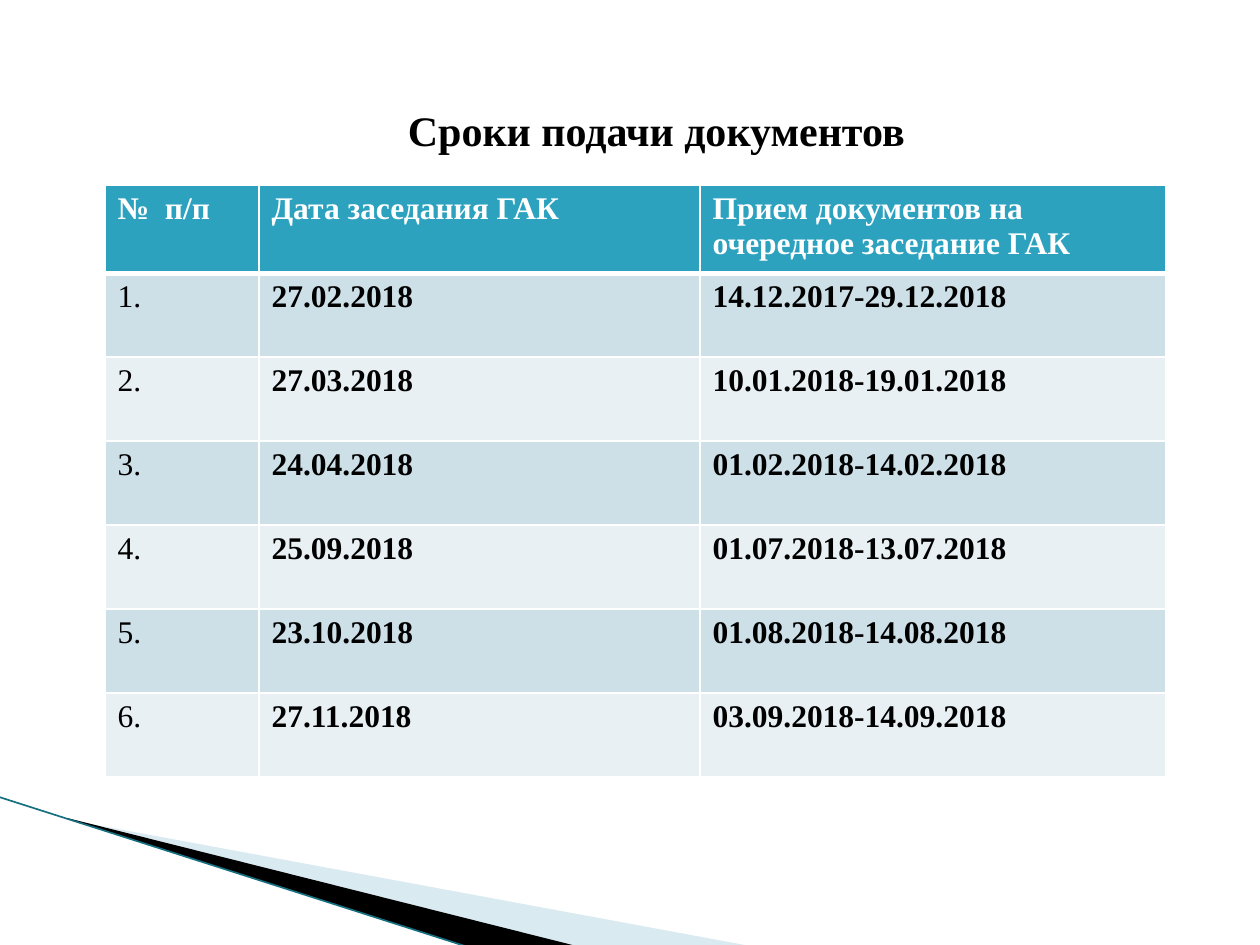
import dataclasses

import lxml.etree
import pptx
import pptx.dml.color
import pptx.enum.shapes
import pptx.enum.text
import pptx.oxml.ns
import pptx.util

PX = 914400 / 126  # EMU per px


@dataclasses.dataclass
class Theme:
    font: str = "Times New Roman"
    title_size: int = 24
    table_size: int = 18
    text: str = "000000"
    white: str = "FFFFFF"
    header: str = "2DA2BF"
    bands: tuple = ("CDE0E8", "E8F0F4")
    pale_wedge: str = "A0CBDC"
    dark_wedge: str = "000000"
    edge: str = "17707F"


theme = Theme()
rgb = pptx.dml.color.RGBColor.from_string
qn = pptx.oxml.ns.qn


def px(n):
    return pptx.util.Emu(round(n * PX))


def style(p, size, color, bold):
    p.font.name = theme.font
    p.font.size = pptx.util.Pt(size)
    p.font.bold = bold
    p.font.color.rgb = rgb(color)


prs = pptx.Presentation()
prs.slide_width, prs.slide_height = px(1260), px(945)
s = prs.slides.add_slide(prs.slide_layouts[6])

# Corner wedges: points, colour, opacity in percent
wedges = [
    ([(69, 820), (750, 946), (575, 946), (69, 819)], theme.pale_wedge, 40),
    ([(67, 818), (576, 946), (469, 947), (68, 819)], theme.dark_wedge, 100),
]
for points, color, opacity in wedges:
    builder = s.shapes.build_freeform(*points[0], scale=PX)
    builder.add_line_segments(points[1:], close=True)
    sp = builder.convert_to_shape()
    sp.shadow.inherit = False
    sp.fill.solid()
    sp.fill.fore_color.rgb = rgb(color)
    sp.line.fill.background()
    if opacity < 100:
        clr = sp.fill._xPr.find(".//" + qn("a:srgbClr"))
        lxml.etree.SubElement(clr, qn("a:alpha"), val=str(opacity * 1000))

# Edge line along the wedges
edge = s.shapes.add_connector(
    pptx.enum.shapes.MSO_CONNECTOR.STRAIGHT, px(-1), px(797), px(468), px(947))
edge.line.color.rgb = rgb(theme.edge)
edge.line.width = pptx.util.Pt(0.95)
lxml.etree.SubElement(edge._element.spPr, qn("a:effectLst"))

# Title
tf = s.shapes.add_textbox(px(44), px(96), px(1201), px(784)).text_frame
tf.word_wrap = True
tf.margin_left = px(36)
tf.margin_top = px(9)
p = tf.paragraphs[0]
p.text = "Сроки подачи документов"
p.alignment = pptx.enum.text.PP_ALIGN.CENTER
style(p, theme.title_size, theme.text, True)

# Table of dates
rows = [
    ("№  п/п", "Дата заседания ГАК", "Прием документов на очередное заседание ГАК"),
    ("1.", "27.02.2018", "14.12.2017-29.12.2018"),
    ("2.", "27.03.2018", "10.01.2018-19.01.2018"),
    ("3.", "24.04.2018", "01.02.2018-14.02.2018"),
    ("4.", "25.09.2018", "01.07.2018-13.07.2018"),
    ("5.", "23.10.2018", "01.08.2018-14.08.2018"),
    ("6.", "27.11.2018", "03.09.2018-14.09.2018"),
]
widths = [154, 441, 466]
row_height = 84
table = s.shapes.add_table(len(rows), len(widths), px(105), px(185),
                           px(sum(widths)), px(row_height * len(rows))).table
for column, width in zip(table.columns, widths):
    column.width = px(width)

for i, row in enumerate(rows):
    table.rows[i].height = px(row_height)
    header = i == 0
    for j, text in enumerate(row):
        cell = table.cell(i, j)
        # Borders go before the fill; a heavy rule parts header and body
        for side in "LRTB":
            heavy = (i, side) in ((0, "B"), (1, "T"))
            ln = lxml.etree.SubElement(cell._tc.get_or_add_tcPr(), qn("a:ln" + side),
                                       w=str(pptx.util.Pt(3 if heavy else 1)))
            fill = lxml.etree.SubElement(ln, qn("a:solidFill"))
            lxml.etree.SubElement(fill, qn("a:srgbClr"), val=theme.white)
        cell.fill.solid()
        cell.fill.fore_color.rgb = rgb(theme.header if header else theme.bands[(i - 1) % 2])
        p = cell.text_frame.paragraphs[0]
        p.text = text
        style(p, theme.table_size, theme.white if header else theme.text, header or j > 0)

prs.save("out.pptx")
